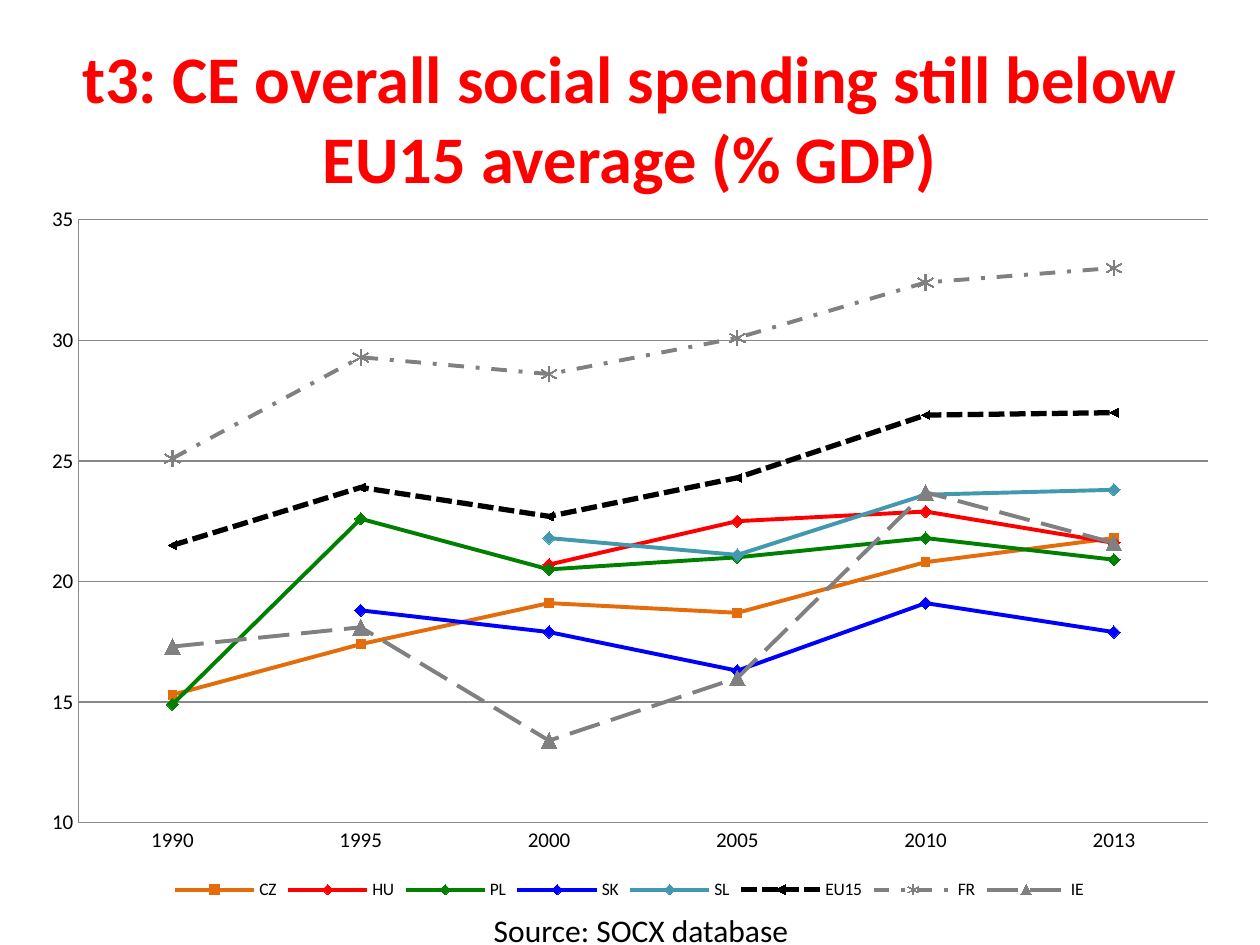
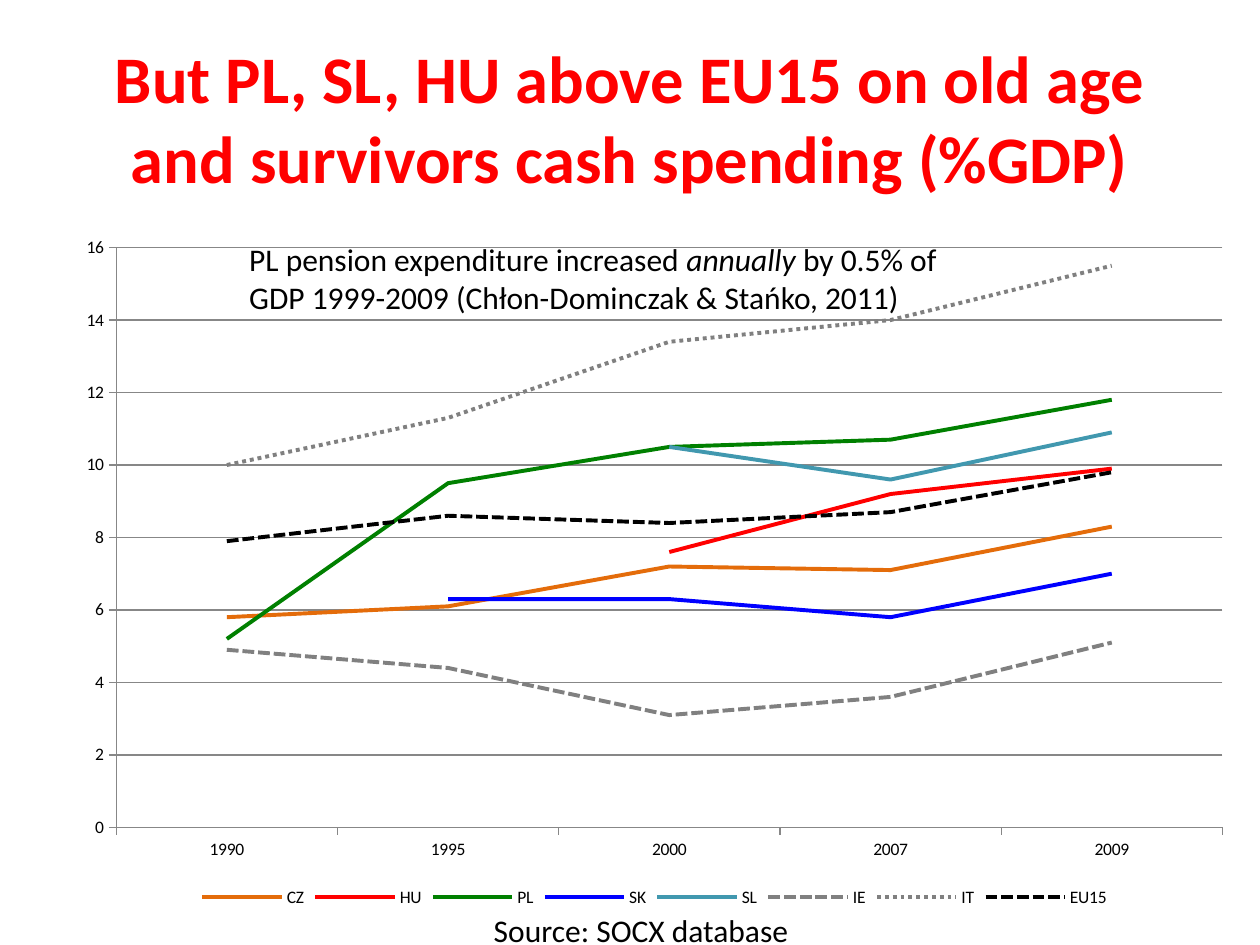
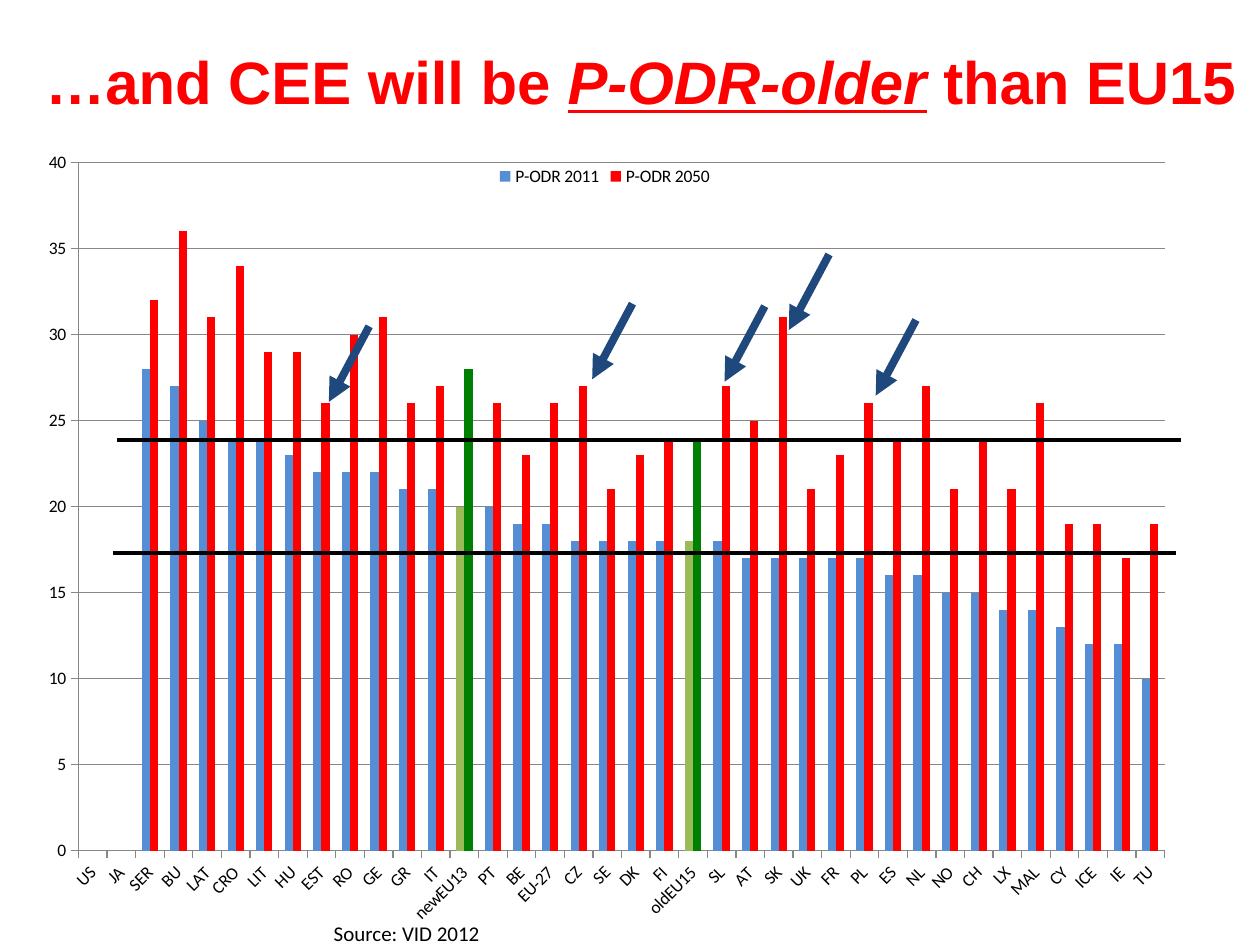
from dataclasses import dataclass
from typing import Optional

from lxml.etree import SubElement
from pptx import Presentation
from pptx.chart.data import CategoryChartData
from pptx.dml.color import RGBColor
from pptx.enum.chart import XL_CHART_TYPE, XL_LEGEND_POSITION, XL_MARKER_STYLE, XL_TICK_MARK
from pptx.enum.dml import MSO_LINE
from pptx.enum.shapes import MSO_CONNECTOR
from pptx.enum.text import MSO_ANCHOR, PP_ALIGN
from pptx.oxml import parse_xml
from pptx.oxml.ns import nsdecls, qn
from pptx.util import Inches, Pt

RED, BLACK, GREY, NAVY = "FF0000", "000000", "808080", "1F497D"
ORANGE, GREEN, BLUE, TEAL = "E46C0A", "008000", "0000FF", "4198AF"
LIGHT_BLUE, LIGHT_GREEN, GRID_GREY = "558ED5", "9BBB59", "878787"
BODY_FONT = "Calibri"
TITLE_ONLY = 5


@dataclass
class Span:
    text: str
    italic: bool = False
    underline: bool = False


@dataclass
class Marker:
    style: XL_MARKER_STYLE = XL_MARKER_STYLE.DIAMOND
    size: int = 7


@dataclass
class Series:
    name: str
    values: list[Optional[float]]
    color: str
    dash: Optional[MSO_LINE] = None
    width: float = 2.25
    marker: Optional[Marker] = None
    highlight: str = ""


@dataclass
class ChartSpec:
    kind: XL_CHART_TYPE
    box: tuple[float, float, float, float]
    plot: tuple[float, float, float, float]
    categories: list[str]
    series: list[Series]
    scale: tuple[float, float, float]
    axis_size: float = 10
    tick: XL_TICK_MARK = XL_TICK_MARK.OUTSIDE
    legend: XL_LEGEND_POSITION = XL_LEGEND_POSITION.BOTTOM


def rgb(color: str) -> RGBColor:
    return RGBColor.from_string(color)


def write_spans(para, spans: list[Span], size: float, color: str,
                font: str = BODY_FONT, bold: bool = False) -> None:
    for span in spans:
        run = para.add_run()
        run.text = span.text
        run.font.name, run.font.size, run.font.bold = font, Pt(size), bold
        run.font.italic, run.font.underline = span.italic, span.underline
        run.font.color.rgb = rgb(color)


def add_page(deck, spans: list[Span], box=(0.5, 0.3, 9, 1.25),
             size: float = 38, font: str = BODY_FONT):
    page = deck.slides.add_slide(deck.slide_layouts[TITLE_ONLY])
    title = page.shapes.title
    title.left, title.top, title.width, title.height = map(Inches, box)
    frame = title.text_frame
    frame.word_wrap, frame.vertical_anchor = True, MSO_ANCHOR.MIDDLE
    para = frame.paragraphs[0]
    para.alignment = PP_ALIGN.CENTER
    write_spans(para, spans, size, RED, font, bold=True)
    return page


def add_text(page, box, spans: list[Span], size: float = 18) -> None:
    frame = page.shapes.add_textbox(*map(Inches, box)).text_frame
    frame.word_wrap = True
    write_spans(frame.paragraphs[0], spans, size, BLACK)


def add_line(page, start, end, color: str, width: float, arrow: bool = False) -> None:
    line = page.shapes.add_connector(MSO_CONNECTOR.STRAIGHT, *map(Inches, (*start, *end)))
    line.line.color.rgb, line.line.width = rgb(color), Pt(width)
    if arrow:
        SubElement(line.line._get_or_add_ln(), qn("a:tailEnd"), type="triangle")
    SubElement(line._element.spPr, qn("a:effectLst"))


def place_plot(chart, plot) -> None:
    """Fix the inner plot area as fractions of the chart."""
    area = chart._chartSpace.chart.plotArea
    for layout in area.findall(qn("c:layout")):
        area.remove(layout)
    sizes = "".join(f'<c:{key} val="{value}"/>' for key, value in zip("xywh", plot))
    area.insert(0, parse_xml(
        f'<c:layout {nsdecls("c")}><c:manualLayout><c:layoutTarget val="inner"/>'
        f'<c:xMode val="edge"/><c:yMode val="edge"/>{sizes}</c:manualLayout></c:layout>'))


def style_axes(chart, spec: ChartSpec) -> None:
    values = chart.value_axis
    values.minimum_scale, values.maximum_scale, values.major_unit = spec.scale
    values.has_major_gridlines = True
    values.tick_labels.number_format = "0"
    values.tick_labels.number_format_is_linked = False
    for axis in (values, chart.category_axis):
        axis.major_tick_mark, axis.minor_tick_mark = spec.tick, XL_TICK_MARK.NONE
        axis.tick_labels.font.size = Pt(spec.axis_size)
        axis.format.line.color.rgb = rgb(GRID_GREY)
    values.major_gridlines.format.line.color.rgb = rgb(GRID_GREY)


def style_line(plotted, series: Series) -> None:
    plotted.smooth = False
    line = plotted.format.line
    line.color.rgb, line.width = rgb(series.color), Pt(series.width)
    if series.dash:
        line.dash_style = series.dash
    if not series.marker:
        plotted.marker.style = XL_MARKER_STYLE.NONE
        return
    marker = plotted.marker
    marker.style, marker.size = series.marker.style, series.marker.size
    marker.format.line.color.rgb = rgb(series.color)
    if series.marker.style == XL_MARKER_STYLE.STAR:
        marker.format.fill.background()
    else:
        marker.format.fill.solid()
        marker.format.fill.fore_color.rgb = rgb(series.color)


def style_columns(plotted, series: Series, categories: list[str]) -> None:
    averages = [categories.index(name) for name in ("newEU13", "oldEU15")]
    fills = [(plotted.format.fill, series.color)]
    fills += [(plotted.points[i].format.fill, series.highlight) for i in averages]
    for fill, color in fills:
        fill.solid()
        fill.fore_color.rgb = rgb(color)


def add_chart(page, spec: ChartSpec):
    data = CategoryChartData()
    data.categories = spec.categories
    for series in spec.series:
        data.add_series(series.name, series.values)
    chart = page.shapes.add_chart(spec.kind, *map(Inches, spec.box), data).chart
    chart.has_title = False
    chart.font.name, chart.font.size = BODY_FONT, Pt(10)
    chart.font.color.rgb = rgb(BLACK)
    chart.has_legend = True
    chart.legend.position, chart.legend.include_in_layout = spec.legend, False
    place_plot(chart, spec.plot)
    style_axes(chart, spec)
    plot = chart.plots[0]
    plot.vary_by_categories = False
    for plotted, series in zip(plot.series, spec.series):
        if spec.kind == XL_CHART_TYPE.COLUMN_CLUSTERED:
            style_columns(plotted, series, spec.categories)
        else:
            style_line(plotted, series)
    return chart


def add_social_source(page) -> None:
    add_text(page, (3.82, 7.18, 3.21, 0.4), [Span("Source: SOCX database")])


def build_overall_spending(deck) -> None:
    page = add_page(deck, [Span("t3: CE overall social spending still below EU15 average (% GDP)")])
    auto = Marker(XL_MARKER_STYLE.AUTOMATIC, 5)
    add_chart(page, ChartSpec(
        XL_CHART_TYPE.LINE_MARKERS, (0.22, 1.53, 9.55, 5.65), (0.042, 0.038, 0.939, 0.847),
        ["1990", "1995", "2000", "2005", "2010", "2013"],
        [
            Series("CZ", [15.3, 17.4, 19.1, 18.7, 20.8, 21.8], ORANGE, marker=auto),
            Series("HU", [None, None, 20.7, 22.5, 22.9, 21.6], RED, marker=Marker()),
            Series("PL", [14.9, 22.6, 20.5, 21, 21.8, 20.9], GREEN, marker=Marker()),
            Series("SK", [None, 18.8, 17.9, 16.3, 19.1, 17.9], BLUE, marker=Marker()),
            Series("SL", [None, None, 21.8, 21.1, 23.6, 23.8], TEAL, marker=Marker()),
            Series("EU15", [21.5, 23.9, 22.7, 24.3, 26.9, 27], BLACK,
                   MSO_LINE.SQUARE_DOT, 3, auto),
            Series("FR", [25.1, 29.3, 28.6, 30.1, 32.4, 33], GREY, MSO_LINE.DASH_DOT,
                   marker=Marker(XL_MARKER_STYLE.STAR, 9)),
            Series("IE", [17.3, 18.1, 13.4, 16, 23.7, 21.6], GREY, MSO_LINE.LONG_DASH,
                   marker=Marker(XL_MARKER_STYLE.TRIANGLE, 9)),
        ],
        (10, 35, 5), axis_size=12, tick=XL_TICK_MARK.NONE))
    add_social_source(page)


def build_old_age_spending(deck) -> None:
    page = add_page(deck, [Span(
        "But PL, SL, HU above EU15 on old age and survivors cash spending (%GDP)")])
    add_chart(page, ChartSpec(
        XL_CHART_TYPE.LINE, (0.5, 1.78, 9.39, 5.46), (0.045, 0.034, 0.935, 0.843),
        ["1990", "1995", "2000", "2007", "2009"],
        [
            Series("CZ", [5.8, 6.1, 7.2, 7.1, 8.3], ORANGE),
            Series("HU", [None, None, 7.6, 9.2, 9.9], RED),
            Series("PL", [5.2, 9.5, 10.5, 10.7, 11.8], GREEN),
            Series("SK", [None, 6.3, 6.3, 5.8, 7], BLUE),
            Series("SL", [None, None, 10.5, 9.6, 10.9], TEAL),
            Series("IE", [4.9, 4.4, 3.1, 3.6, 5.1], GREY, MSO_LINE.SQUARE_DOT),
            Series("IT", [10, 11.3, 13.4, 14, 15.5], GREY, MSO_LINE.ROUND_DOT),
            Series("EU15", [7.9, 8.6, 8.4, 8.7, 9.8], BLACK, MSO_LINE.SQUARE_DOT),
        ],
        (0, 16, 2)))
    add_social_source(page)
    add_text(page, (1.88, 1.86, 5.9, 0.74), [
        Span("PL pension expenditure increased "), Span("annually", italic=True),
        Span(" by 0.5% of GDP 1999-2009 (Chłon-Dominczak & Stańko, 2011)")])


def build_dependency_ratios(deck) -> None:
    page = add_page(
        deck,
        [Span("…and CEE will be "), Span("P-ODR-older", italic=True, underline=True),
         Span(" ", italic=True), Span("than EU15")],
        (0.17, 0.14, 9.83, 1), 34.2, "Arial")
    countries = (
        "US JA SER BU LAT CRO LIT HU EST RO GE GR IT newEU13 PT BE EU-27 CZ SE DK FI "
        "oldEU15 SL AT SK UK FR PL ES NL NO CH LX MAL CY ICE IE TU").split()
    ratios_2011 = [
        None, None, 28, 27, 25, 24, 24, 23, 22, 22, 22, 21, 21, 20, 20, 19, 19, 18, 18,
        18, 18, 18, 18, 17, 17, 17, 17, 17, 16, 16, 15, 15, 14, 14, 13, 12, 12, 10]
    ratios_2050 = [
        None, None, 32, 36, 31, 34, 29, 29, 26, 30, 31, 26, 27, 28, 26, 23, 26, 27, 21,
        23, 24, 24, 27, 25, 31, 21, 23, 26, 24, 27, 21, 24, 21, 26, 19, 19, 17, 19]
    chart = add_chart(page, ChartSpec(
        XL_CHART_TYPE.COLUMN_CLUSTERED, (0.2, 1.21, 9.2, 6.29), (0.046, 0.013, 0.937, 0.868),
        countries,
        [Series("P-ODR 2011", ratios_2011, LIGHT_BLUE, highlight=LIGHT_GREEN),
         Series("P-ODR 2050", ratios_2050, RED, highlight=GREEN)],
        (0, 40, 5), legend=XL_LEGEND_POSITION.TOP))
    chart.plots[0].gap_width, chart.plots[0].overlap = 150, 0
    for body in chart._chartSpace.xpath(".//c:catAx/c:txPr/a:bodyPr"):
        body.set("rot", "-2700000")

    for left, right, level in ((0.93, 9.37, 3.49), (0.9, 9.33, 4.39)):
        add_line(page, (right, level), (left, level), BLACK, 2.25)
    arrow_tips = ((4.7, 3.01), (2.61, 3.19), (5.75, 3.03), (6.26, 2.62), (6.95, 3.14))
    for x, y in arrow_tips:
        add_line(page, (x + 0.32, y - 0.6), (x, y), NAVY, 4.5, arrow=True)
    add_text(page, (2.55, 7.26, 6.62, 0.3), [Span("Source: VID 2012")], 12)


def main() -> None:
    deck = Presentation()
    deck.slide_width, deck.slide_height = Inches(10), Inches(7.5)
    build_overall_spending(deck)
    build_old_age_spending(deck)
    build_dependency_ratios(deck)
    deck.save("out.pptx")


if __name__ == "__main__":
    main()
